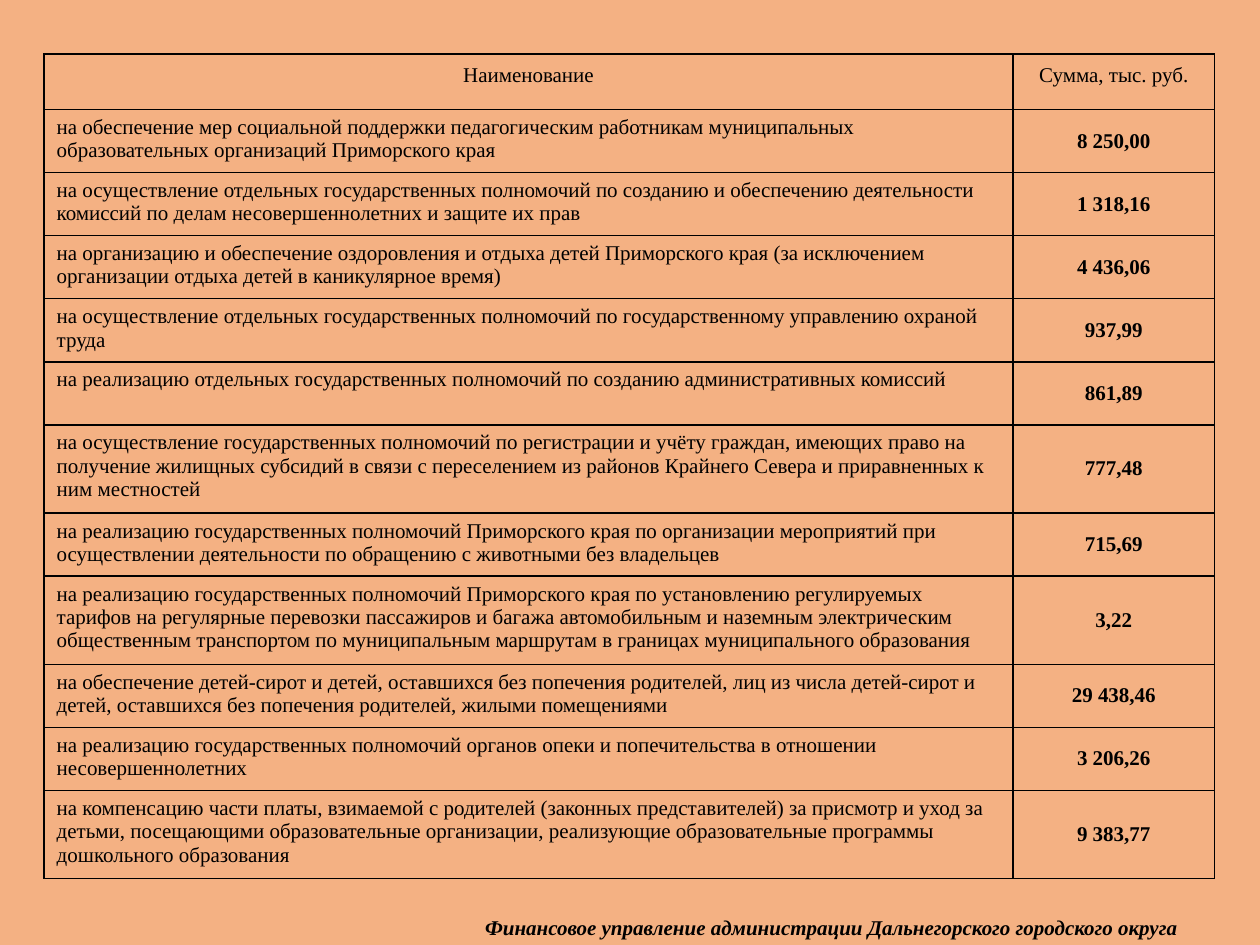
import pptx
import pptx.util
import pptx.dml.color
import pptx.enum.text
import pptx.oxml
import pptx.oxml.ns
from pptx.util import Inches

BACKGROUND = pptx.dml.color.RGBColor(0xF4, 0xB1, 0x83)
BLACK = pptx.dml.color.RGBColor(0, 0, 0)
LEFT = pptx.enum.text.PP_ALIGN.LEFT
CENTER = pptx.enum.text.PP_ALIGN.CENTER
TOP = pptx.enum.text.MSO_ANCHOR.TOP
MIDDLE = pptx.enum.text.MSO_ANCHOR.MIDDLE

HEADER = ("Наименование", "Сумма, тыс. руб.")
# Purpose, amount, number of text lines
SUBVENTIONS = [
    ("на обеспечение мер социальной поддержки педагогическим работникам муниципальных "
     "образовательных организаций Приморского края", "8 250,00", 2),
    ("на осуществление отдельных государственных полномочий по созданию и обеспечению "
     "деятельности комиссий по делам несовершеннолетних и защите их прав", "1 318,16", 2),
    ("на организацию и обеспечение оздоровления и отдыха детей Приморского края (за исключением "
     "организации отдыха детей в каникулярное время)", "4 436,06", 2),
    ("на осуществление отдельных государственных полномочий по государственному управлению "
     "охраной труда", "937,99", 2),
    ("на реализацию отдельных государственных полномочий по созданию административных комиссий",
     "861,89", 2),
    ("на осуществление государственных полномочий по регистрации и учёту граждан, имеющих право на "
     "получение жилищных субсидий в связи с переселением из районов Крайнего Севера и приравненных "
     "к ним местностей", "777,48", 3),
    ("на реализацию государственных полномочий Приморского края по организации мероприятий при "
     "осуществлении деятельности по обращению с животными без владельцев", "715,69", 2),
    ("на реализацию государственных полномочий Приморского края по установлению регулируемых "
     "тарифов на регулярные перевозки пассажиров и багажа автомобильным и наземным электрическим "
     "общественным транспортом по муниципальным маршрутам в границах муниципального образования",
     "3,22", 3),
    ("на обеспечение детей-сирот и детей, оставшихся без попечения родителей, лиц из числа "
     "детей-сирот и детей, оставшихся без попечения родителей, жилыми помещениями",
     "29 438,46", 2),
    ("на реализацию государственных полномочий органов опеки и попечительства в отношении "
     "несовершеннолетних", "3 206,26", 2),
    ("на компенсацию части платы, взимаемой с родителей (законных представителей) за присмотр и "
     "уход за детьми, посещающими образовательные организации, реализующие образовательные "
     "программы дошкольного образования", "9 383,77", 3),
]
HEADER_HEIGHT = Inches(0.44)
ROW_HEIGHTS = {2: Inches(0.5), 3: Inches(0.7)}


def write(frame, text, align=LEFT, bold=False, italic=False, spacing=1.0):
    paragraph = frame.paragraphs[0]
    paragraph.alignment = align
    paragraph.line_spacing = spacing
    run = paragraph.add_run()
    run.text = text
    run.font.name = "Times New Roman"
    run.font.size = pptx.util.Pt(12)
    run.font.bold = bold
    run.font.italic = italic
    run.font.color.rgb = BLACK


def outline(cell):
    properties = cell._tc.get_or_add_tcPr()
    for position, side in enumerate(("lnL", "lnR", "lnT", "lnB")):
        properties.insert(position, pptx.oxml.parse_xml(
            f'<a:{side} {pptx.oxml.ns.nsdecls("a")} w="12700">'
            f'<a:solidFill><a:srgbClr val="{BLACK}"/></a:solidFill></a:{side}>'))


presentation = pptx.Presentation()
presentation.slide_width = Inches(10)
presentation.slide_height = Inches(7.5)
slide = presentation.slides.add_slide(presentation.slide_layouts[6])
slide.background.fill.solid()
slide.background.fill.fore_color.rgb = BACKGROUND

# Department signature
signature = slide.shapes.add_textbox(Inches(3.44), Inches(7.21), Inches(6.05), Inches(0.3)).text_frame
signature.word_wrap = True
signature.margin_left = Inches(0.41)
signature.margin_right = 0
write(signature, "Финансовое управление администрации Дальнегорского городского округа",
      bold=True, italic=True)

# Subventions table
heights = [HEADER_HEIGHT] + [ROW_HEIGHTS[lines] for _, _, lines in SUBVENTIONS]
subventions = slide.shapes.add_table(len(heights), 2, Inches(0.35), Inches(0.43),
                                     Inches(9.29), sum(heights)).table
subventions.horz_banding = False
subventions.first_row = False
subventions.columns[0].width = Inches(7.69)
subventions.columns[1].width = Inches(1.6)
for row, height in zip(subventions.rows, heights):
    row.height = height
    for cell in row.cells:
        cell.fill.background()
        outline(cell)

for column, title in enumerate(HEADER):
    write(subventions.cell(0, column).text_frame, title, align=CENTER, spacing=1.15)
for row, (purpose, amount, _) in enumerate(SUBVENTIONS, start=1):
    purpose_cell, amount_cell = subventions.cell(row, 0), subventions.cell(row, 1)
    purpose_cell.vertical_anchor = TOP
    amount_cell.vertical_anchor = MIDDLE
    write(purpose_cell.text_frame, purpose)
    write(amount_cell.text_frame, amount, align=CENTER, bold=True)

presentation.save("out.pptx")
